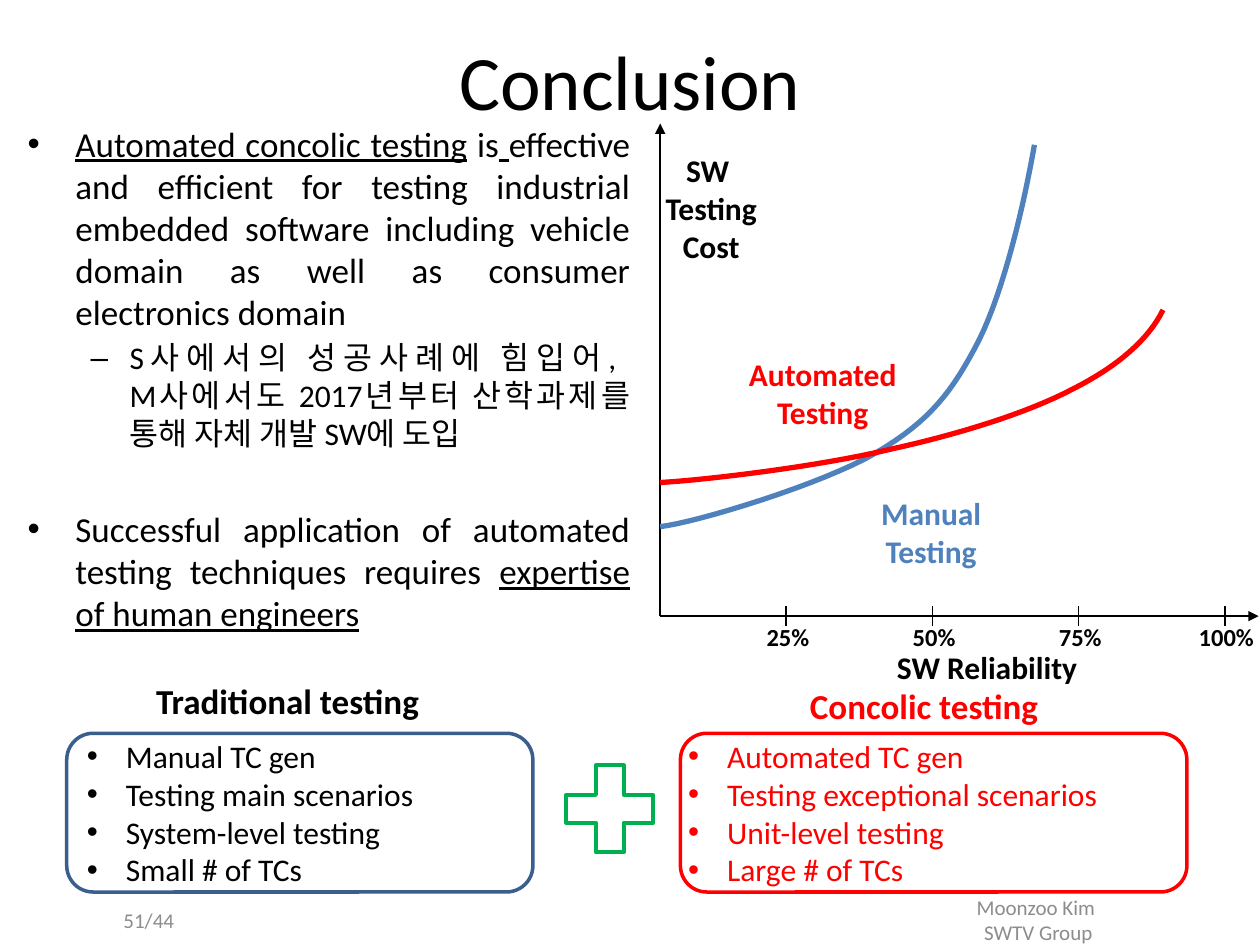
"""Build the conclusion slide: findings, cost curves and the two testing styles side by side."""
from dataclasses import dataclass

from lxml import etree
from pptx import Presentation
from pptx.dml.color import RGBColor
from pptx.enum.shapes import MSO_CONNECTOR, MSO_SHAPE
from pptx.enum.text import MSO_ANCHOR, PP_ALIGN
from pptx.oxml.ns import qn
from pptx.util import Inches, Pt

LEFT, CENTER, RIGHT, JUSTIFY = PP_ALIGN.LEFT, PP_ALIGN.CENTER, PP_ALIGN.RIGHT, PP_ALIGN.JUSTIFY
TOP, MIDDLE = MSO_ANCHOR.TOP, MSO_ANCHOR.MIDDLE
ROUNDED, PLUS = MSO_SHAPE.ROUNDED_RECTANGLE, MSO_SHAPE.MATH_PLUS
STRAIGHT = MSO_CONNECTOR.STRAIGHT


@dataclass(frozen=True)
class Theme:
    font: str = "Calibri"
    black: str = "000000"
    gray: str = "8C8C8C"
    red: str = "FF0000"
    blue: str = "4F81BD"
    navy: str = "3A5F8C"
    green: str = "00B050"
    title: int = 44
    body: int = 20
    detail: int = 18
    tick: int = 14
    footer: int = 12


THEME = Theme()

TITLE = ("Conclusion", (0, 0.16, 10, 0.94))
FINDINGS_BOX = (0.12, 0.92, 4.98, 5.7)
FINDINGS = [
    ("•", THEME.body, 0.38, 0.38, 4, [
        ("Automated concolic testing", True), (" is", False), (" ", True),
        ("effective and efficient for testing industrial embedded software including "
         "vehicle domain as well as consumer electronics domain", False)]),
    ("–", THEME.detail, 0.81, 0.31, 3.6, [
        ("S사에서의 성공사례에 힘입어, ", False), ("\n", False),
        ("M사에서도 2017년부터 산학과제를 통해 자체 개발 SW에 도입", False)]),
    ("•", THEME.body, 0.38, 0.38, 32, [
        ("Successful application of automated testing techniques requires ", False),
        ("expertise of human engineers", True)]),
]
FOOTERS = [
    (["Moonzoo Kim ", "SWTV Group"], (7.5, 7.1, 1.48, 0.4), CENTER),
    (["51/44"], (0.5, 7.1, 0.98, 0.4), RIGHT),
]
LABELS = [
    (["Traditional testing"], (1.14, 5.34, 2.31, 0.44), THEME.body, THEME.black, LEFT),
    (["Concolic testing"], (6.33, 5.38, 2.03, 0.44), THEME.body, THEME.red, LEFT),
    (["SW Reliability"], (7.02, 5.09, 1.64, 0.4), THEME.detail, THEME.black, LEFT),
    (["SW ", "Testing", "Cost"], (5.18, 1.15, 0.93, 1.01), THEME.detail, THEME.black, CENTER),
    (["Manual", "Testing"], (6.65, 3.87, 1.48, 0.71), THEME.detail, THEME.blue, CENTER),
    (["Automated", "Testing"], (5.71, 2.77, 1.64, 0.71), THEME.detail, THEME.red, CENTER),
]
CARDS = [
    (["Manual TC gen", "Testing main scenarios", "System-level testing", "Small # of TCs"],
     (0.53, 5.82, 3.7, 1.26), THEME.navy, THEME.black, 0.1),
    (["Automated TC gen", "Testing exceptional scenarios", "Unit-level testing", "Large # of TCs"],
     (5.4, 5.82, 4.02, 1.26), THEME.red, THEME.red, 0),
]
PLUS_BOX = (4.37, 5.95, 0.94, 0.94)

ORIGIN, AXIS_RIGHT, AXIS_TOP = (5.24, 4.89), 9.99, 0.98
TICKS = [("25%", 0.55), ("50%", 0.55), ("75%", 0.55), ("100%", 0.65)]
FIRST_TICK, TICK_STEP, TICK_HALF = 6.24, 1.16, 0.08
CURVES = [
    (THEME.blue, [(5.24, 4.18), (5.52, 4.15), (6.54, 3.84), (6.96, 3.59), (7.38, 3.34),
                  (7.56, 3.11), (7.77, 2.7), (7.97, 2.3), (8.13, 1.61), (8.21, 1.15)]),
    (THEME.red, [(5.24, 3.83), (5.61, 3.81), (6.51, 3.7), (7.05, 3.57), (7.6, 3.45),
                 (8.15, 3.28), (8.51, 3.09), (8.87, 2.91), (9.12, 2.69), (9.23, 2.46)]),
]
CURVE_STEPS = 16


def place(shape, box):
    shape.left, shape.top, shape.width, shape.height = map(Inches, box)


def style(font, size, color, bold=False):
    font.name, font.size, font.bold = THEME.font, Pt(size), bold
    font.color.rgb = RGBColor.from_string(color)


def outline(shape, color, width):
    shape.shadow.inherit = False
    shape.fill.background()
    shape.line.color.rgb = RGBColor.from_string(color)
    shape.line.width = Pt(width)


def set_bullet(para, mark, margin, hanging):
    properties = para._p.get_or_add_pPr()
    properties.set("marL", str(Inches(margin)))
    properties.set("indent", str(-Inches(hanging)))
    etree.SubElement(properties, qn("a:buFont")).set("typeface", "Arial")
    etree.SubElement(properties, qn("a:buChar")).set("char", mark)


def write(frame, lines, size, color, align, bold=False):
    frame.text = "\n".join(lines)
    for para in frame.paragraphs:
        para.alignment = align
        for span in para.runs:
            style(span.font, size, color, bold)


def add_text(page, lines, box, size, color, align, anchor=TOP, bold=False, wrap=True):
    frame = page.shapes.add_textbox(*map(Inches, box)).text_frame
    frame.word_wrap, frame.vertical_anchor = wrap, anchor
    write(frame, lines, size, color, align, bold)


def add_findings(page):
    frame = page.shapes.add_textbox(*map(Inches, FINDINGS_BOX)).text_frame
    frame.word_wrap = True
    for index, (mark, size, margin, hanging, gap, spans) in enumerate(FINDINGS):
        para = frame.add_paragraph() if index else frame.paragraphs[0]
        para.alignment, para.space_before = JUSTIFY, Pt(gap)
        set_bullet(para, mark, margin, hanging)
        for text, underlined in spans:
            if text == "\n":
                para.add_line_break()
                continue
            span = para.add_run()
            span.text = text
            style(span.font, size, THEME.black)
            span.font.underline = underlined


def add_card(page, lines, box, line_color, text_color, inset):
    card = page.shapes.add_shape(ROUNDED, *map(Inches, box))
    outline(card, line_color, 2)
    frame = card.text_frame
    frame.margin_left = frame.margin_right = Inches(inset)
    frame.vertical_anchor = MIDDLE
    write(frame, lines, THEME.detail, text_color, LEFT)
    for para in frame.paragraphs:
        set_bullet(para, "•", 0.31, 0.31)


def add_line(page, start, end, arrow=False):
    line = page.shapes.add_connector(STRAIGHT, *map(Inches, start + end))
    line.line.color.rgb = RGBColor.from_string(THEME.black)
    line.line.width = Pt(1)
    if arrow:
        etree.SubElement(line.line._get_or_add_ln(), qn("a:tailEnd")).set("type", "triangle")
    etree.SubElement(line._element.spPr, qn("a:effectLst"))


def bezier(controls, t):
    weights = ((1 - t) ** 3, 3 * t * (1 - t) ** 2, 3 * t ** 2 * (1 - t), t ** 3)
    return tuple(Inches(sum(w * point[axis] for w, point in zip(weights, controls)))
                 for axis in (0, 1))


def add_curve(page, color, controls):
    points = [bezier(controls[first:first + 4], step / CURVE_STEPS)
              for first in range(0, len(controls) - 1, 3)
              for step in range(1, CURVE_STEPS + 1)]
    builder = page.shapes.build_freeform(*map(Inches, controls[0]))
    builder.add_line_segments(points, close=False)
    outline(builder.convert_to_shape(), color, 3)


def add_graph(page):
    left, base = ORIGIN
    add_line(page, ORIGIN, (AXIS_RIGHT, base), arrow=True)
    add_line(page, ORIGIN, (left, AXIS_TOP), arrow=True)
    for index, (text, width) in enumerate(TICKS):
        x = FIRST_TICK + index * TICK_STEP
        add_line(page, (x, base - TICK_HALF), (x, base + TICK_HALF))
        add_text(page, [text], (x - width / 2 + 0.02, base, width, 0.34),
                 THEME.tick, THEME.black, LEFT, bold=True, wrap=False)
    for color, controls in CURVES:
        add_curve(page, color, controls)


def main():
    deck = Presentation()
    deck.slide_width, deck.slide_height = Inches(10), Inches(7.5)
    page = deck.slides.add_slide(deck.slide_layouts[5])
    title, box = TITLE
    place(page.shapes.title, box)
    page.shapes.title.text_frame.vertical_anchor = MIDDLE
    write(page.shapes.title.text_frame, [title], THEME.title, THEME.black, CENTER)
    add_findings(page)
    for lines, box, align in FOOTERS:
        add_text(page, lines, box, THEME.footer, THEME.gray, align, anchor=MIDDLE)
    for card in CARDS:
        add_card(page, *card)
    add_graph(page)
    for lines, box, size, color, align in LABELS:
        add_text(page, lines, box, size, color, align, bold=True, wrap=False)
    outline(page.shapes.add_shape(PLUS, *map(Inches, PLUS_BOX)), THEME.green, 2.25)
    deck.save("out.pptx")


if __name__ == "__main__":
    main()
